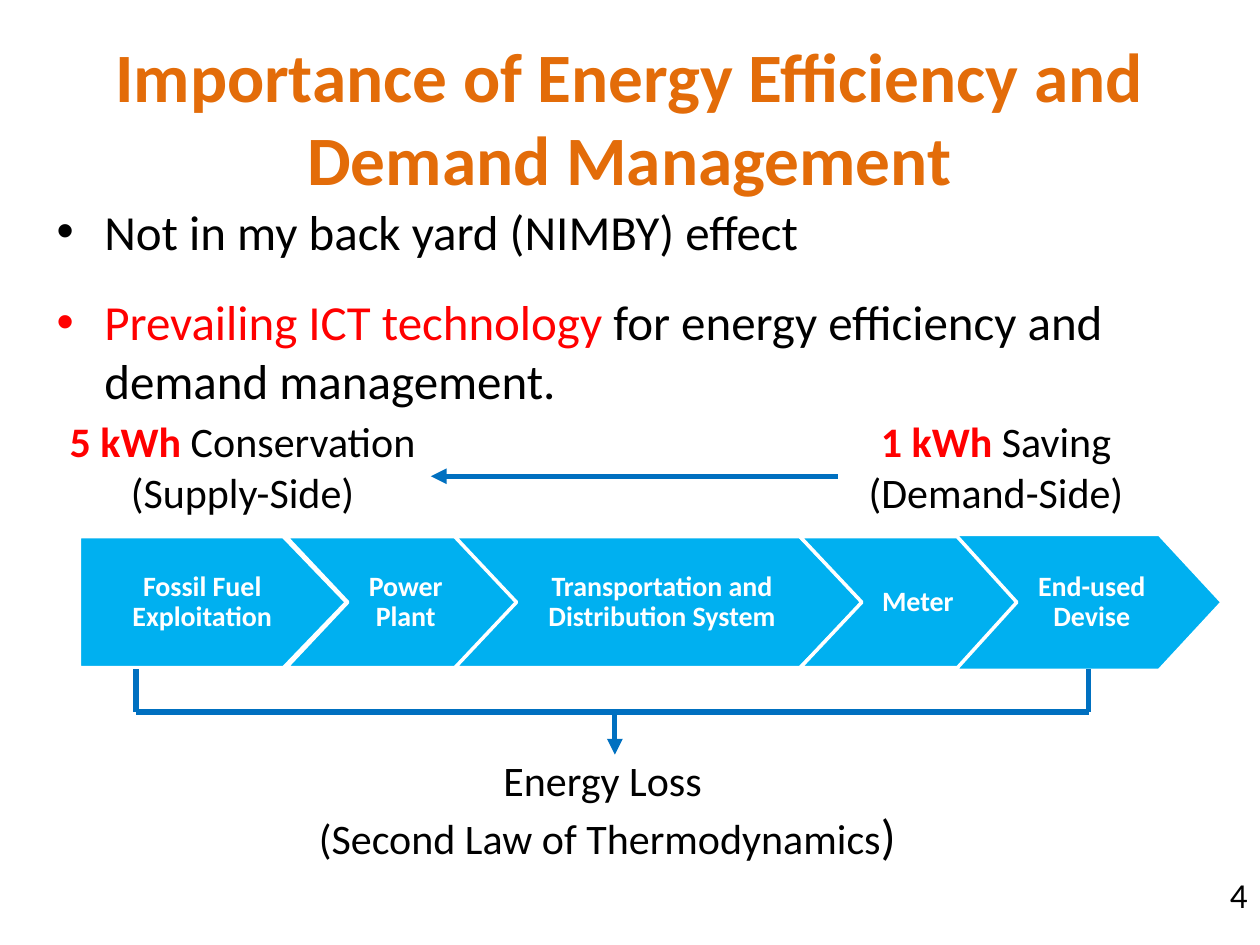
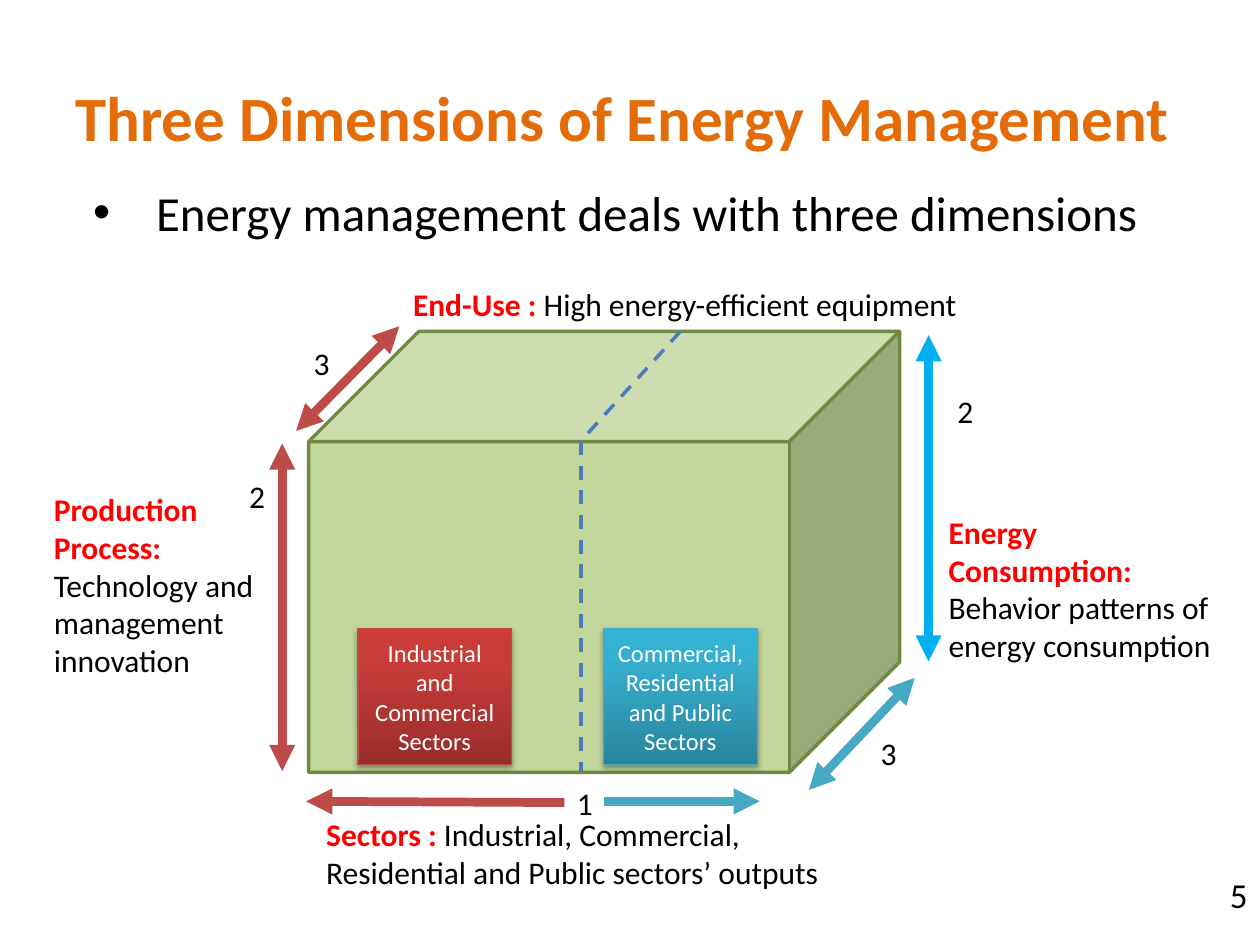
from copy import deepcopy
from dataclasses import dataclass

from lxml.etree import SubElement
from pptx import Presentation
from pptx.dml.color import RGBColor
from pptx.enum.dml import MSO_LINE_DASH_STYLE as Dash
from pptx.enum.shapes import MSO_CONNECTOR as Connector, MSO_SHAPE as Shape
from pptx.enum.text import MSO_ANCHOR as Anchor, PP_ALIGN as Align
from pptx.oxml.ns import qn
from pptx.util import Inches, Pt


@dataclass(frozen=True)
class Theme:
    font: str = "Calibri"
    title: str = "E36C09"
    text: str = "000000"
    accent: str = "FF0000"
    white: str = "FFFFFF"
    sky: str = "00B0F0"
    blue: str = "0070C0"
    red: str = "BD4B48"
    teal: str = "45A9C4"
    divider: str = "4A7DBA"
    cube: str = "C2D59B"
    cube_edge: str = "718840"
    red_blend: tuple = ("992D2B", "C93D39", "CD3A36")
    teal_blend: tuple = ("29859E", "36B0D0", "33B3D5")
    body_size: float = 28
    caption_size: float = 24
    number_size: float = 20
    label_size: float = 18
    step_size: float = 16
    sector_size: float = 14


THEME = Theme()


def rgb(value):
    return RGBColor.from_string(value)


def accent(text, bold=True):
    """A highlighted span."""
    return text, {"color": THEME.accent, "bold": bold}


# Text
def add_bullet(para, indent, color):
    props = para._p.get_or_add_pPr()
    props.set("marL", str(Inches(indent)))
    props.set("indent", str(-Inches(indent)))
    SubElement(SubElement(props, qn("a:buClr")), qn("a:srgbClr"), val=color)
    SubElement(props, qn("a:buFont"), typeface="Arial")
    SubElement(props, qn("a:buChar"), char="•")


def write(shape, paras, size=THEME.label_size, color=THEME.text, bold=False,
          align=Align.LEFT, anchor=Anchor.TOP, margins=(0.1, 0.1),
          spacing=None, gap=0, indent=None):
    """Fill a shape; a paragraph is a string or a list of strings and spans."""
    frame = shape.text_frame
    frame.word_wrap = True
    frame.vertical_anchor = anchor
    frame.margin_left, frame.margin_right = map(Inches, margins)
    frame.margin_top = frame.margin_bottom = Inches(0.05)
    paras = [paras] if isinstance(paras, str) else paras
    for index, parts in enumerate(paras):
        para = frame.paragraphs[0] if index == 0 else frame.add_paragraph()
        para.alignment = align
        if spacing:
            para.line_spacing = spacing
        if index and gap:
            para.space_before = Pt(gap)
        parts = [parts] if isinstance(parts, str) else parts
        spans = [(part, {}) if isinstance(part, str) else part for part in parts]
        if indent:
            add_bullet(para, indent, spans[0][1].get("color", color))
        for text, own in spans:
            span = para.add_run()
            span.text = text
            span.font.name = THEME.font
            span.font.size = Pt(own.get("size", size))
            span.font.bold = own.get("bold", bold)
            span.font.color.rgb = rgb(own.get("color", color))


def add_text(page, at, paras, **style):
    box = page.shapes.add_textbox(*map(Inches, at))
    write(box, paras, **style)


# Shapes and lines
def outline(shape, color, width):
    shape.shadow.inherit = False
    shape.line.color.rgb = rgb(color)
    shape.line.width = Pt(width)


def add_line(page, start, end, color, width, head=False, tail=False, dash=None):
    line = page.shapes.add_connector(Connector.STRAIGHT, *map(Inches, start + end))
    line.line.color.rgb = rgb(color)
    line.line.width = Pt(width)
    if dash:
        line.line.dash_style = dash
    stroke = line.line._get_or_add_ln()
    for tag, wanted in (("a:headEnd", head), ("a:tailEnd", tail)):
        if wanted:
            SubElement(stroke, qn(tag), type="triangle")
    SubElement(line._element.spPr, qn("a:effectLst"))


def add_step(page, text, left, right, notch=0.49, half=0.52, margins=(0.55, 0.5)):
    """One chevron of the supply chain; notch 0 gives a flat left side."""
    middle, shoulder = 4.78, right - 0.5
    points = [(left, middle - half), (shoulder, middle - half), (right, middle),
              (shoulder, middle + half), (left, middle + half)]
    if notch:
        points.append((left + notch, middle))
    points = [(Inches(x), Inches(y)) for x, y in points]
    builder = page.shapes.build_freeform(*points[0])
    builder.add_line_segments(points[1:], close=True)
    step = builder.convert_to_shape()
    step.fill.solid()
    step.fill.fore_color.rgb = rgb(THEME.sky)
    outline(step, THEME.white, 2)
    write(step, text, size=THEME.step_size, color=THEME.white, bold=True,
          align=Align.CENTER, anchor=Anchor.MIDDLE, margins=margins, spacing=0.9)


def add_sector(page, left, text, blend, edge):
    """A shaded box, tall enough for four lines, with a soft shadow below."""
    box = page.shapes.add_shape(Shape.RECTANGLE, *map(Inches, (left, 4.99, 1.22, 1.08)))
    box.fill.gradient()
    box.fill.gradient_angle = 90
    stops = box._element.spPr.find(".//" + qn("a:gsLst"))
    stops.append(deepcopy(stops[-1]))
    for stop, color, position in zip(box.fill.gradient_stops, blend, (0, 0.8, 1)):
        stop.color.rgb = rgb(color)
        stop.position = position
    outline(box, edge, 0.75)
    effects = box._element.spPr.find(qn("a:effectLst"))
    shadow = SubElement(effects, qn("a:outerShdw"), blurRad=str(Pt(3.1)),
                        dist=str(Pt(1.8)), dir="5400000", rotWithShape="0")
    shade = SubElement(shadow, qn("a:srgbClr"), val="000000")
    SubElement(shade, qn("a:alpha"), val="35000")
    write(box, text, size=THEME.sector_size, color=THEME.white,
          align=Align.CENTER, anchor=Anchor.MIDDLE)


# Pages
def add_page(deck, title, title_size, number):
    page = deck.slides.add_slide(deck.slide_layouts[6])
    add_text(page, (0.35, 0.3, 9.29, 1.25), title, size=title_size,
             color=THEME.title, bold=True, align=Align.CENTER, anchor=Anchor.MIDDLE)
    add_text(page, (9.49, 6.9, 0.51, 0.4), str(number), size=THEME.number_size,
             align=Align.RIGHT, anchor=Anchor.MIDDLE)
    return page


def build_importance(deck):
    page = add_page(deck, "Importance of Energy Efficiency and Demand Management", 39.6, 4)
    add_text(page, (0.35, 1.55, 9.29, 5.51), [
        "Not in my back yard (NIMBY) effect",
        [accent("Prevailing ICT technology", bold=False),
         " for energy efficiency and demand management."],
    ], size=THEME.body_size, gap=18, indent=0.38)

    # Supply chain
    add_step(page, "Fossil Fuel Exploitation", 0.63, 2.75, notch=0, margins=(0.09, 0.26))
    for text, left, right in (
        ("Power Plant", 2.27, 4.12),
        ("Transportation and Distribution System", 3.61, 6.85),
        ("Meter", 6.35, 8.17),
    ):
        add_step(page, text, left, right)
    add_step(page, "End-used Devise", 7.58, 9.7, half=0.54)

    # Loss bracket and saving arrow
    first, last, centre, top, bar = 1.08, 8.64, 4.88, 5.31, 5.65
    add_line(page, (first, bar), (last, bar), THEME.blue, 3)
    for x in (first, last):
        add_line(page, (x, top), (x, bar), THEME.blue, 3)
    add_line(page, (centre, bar), (centre, 5.99), THEME.blue, 3, tail=True)
    add_line(page, (3.42, 3.78), (6.65, 3.78), THEME.blue, 3, head=True)

    # Captions
    for at, paras in (
        ((2.41, 5.94, 4.82, 0.98),
         ["Energy Loss ",
          ["(Second Law of Thermodynamics", (")", {"size": THEME.body_size})]]),
        ((0.43, 3.25, 2.99, 0.91),
         [[accent("5 kWh "), "Conservation"], "(Supply-Side)"]),
        ((6.49, 3.25, 2.83, 0.91),
         [[accent("1 kWh "), "Saving"], "(Demand-Side)"]),
    ):
        add_text(page, at, paras, size=THEME.caption_size, align=Align.CENTER)


def build_dimensions(deck):
    page = add_page(deck, "Three Dimensions of Energy Management ", 36, 5)

    # Cube with its dividing line
    cube = page.shapes.add_shape(Shape.CUBE, *map(Inches, (2.45, 2.63, 4.69, 3.5)))
    cube.fill.solid()
    cube.fill.fore_color.rgb = rgb(THEME.cube)
    outline(cube, THEME.cube_edge, 2)
    fold = (4.61, 3.5)
    add_line(page, (5.4, 2.63), fold, THEME.divider, 2, dash=Dash.DASH)
    add_line(page, fold, (4.61, 6.13), THEME.divider, 2, dash=Dash.DASH)

    # Dimension arrows
    for start, end, color in (
        ((7.37, 5.25), (7.37, 2.66), THEME.sky),
        ((2.24, 6.12), (2.24, 3.52), THEME.red),
        ((2.35, 3.42), (3.17, 2.59), THEME.red),
        ((6.42, 6.27), (7.26, 5.38), THEME.teal),
    ):
        add_line(page, start, end, color, 5, head=True, tail=True)
    add_line(page, (4.79, 6.36), (6.03, 6.36), THEME.teal, 5, tail=True)
    add_line(page, (4.48, 6.37), (2.43, 6.36), THEME.red, 5, tail=True)

    # Sectors
    add_sector(page, 2.84, "Industrial and Commercial Sectors",
               THEME.red_blend, THEME.red)
    add_sector(page, 4.79, "Commercial, Residential and Public Sectors",
               THEME.teal_blend, THEME.teal)

    # Dimension numbers
    for number, left, top in (("1", 4.48, 6.17), ("2", 7.5, 3.06), ("2", 1.88, 3.74),
                              ("3", 2.39, 2.68), ("3", 6.89, 5.78)):
        add_text(page, (left, top, 0.4, 0.39), number)

    # Dimension descriptions
    for at, paras in (
        ((2.49, 6.42, 4.25, 0.71),
         [[accent("Sectors :"),
           " Industrial, Commercial, Residential and Public sectors’ outputs"]]),
        ((7.43, 4.02, 2.38, 1.32),
         [[accent("Energy Consumption:")], "Behavior patterns of energy consumption"]),
        ((0.33, 3.84, 1.87, 1.62),
         [[accent("Production Process:")], "Technology and management innovation"]),
        ((3.18, 2.21, 5.84, 0.4),
         [[accent("End-Use : "), "High energy-efficient equipment"]]),
    ):
        add_text(page, at, paras)
    add_text(page, (0.64, 1.4, 8.58, 0.57), "Energy management deals with three dimensions",
             size=THEME.body_size, indent=0.5)


def main():
    deck = Presentation()
    deck.slide_width, deck.slide_height = Inches(10), Inches(7.5)
    build_importance(deck)
    build_dimensions(deck)
    deck.save("out.pptx")


if __name__ == "__main__":
    main()
